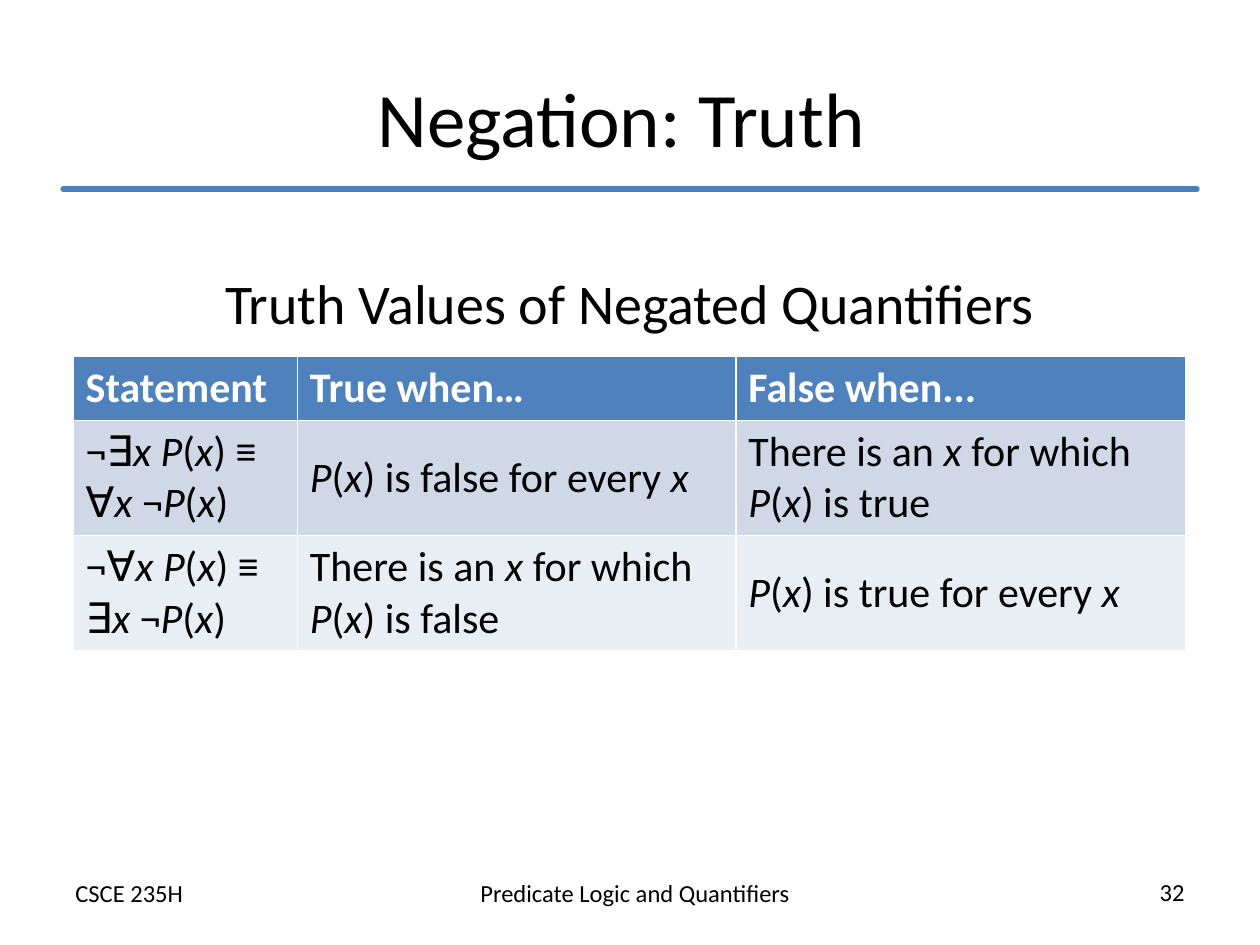
"""Build the slide on the truth values of negated quantifiers."""
import dataclasses

import lxml.etree
import pptx
import pptx.dml.color
import pptx.enum.shapes
import pptx.enum.text
import pptx.oxml.ns
import pptx.util

Inches = pptx.util.Inches
Align = pptx.enum.text.PP_ALIGN
Anchor = pptx.enum.text.MSO_ANCHOR

FONT = "Calibri"
BLACK = "000000"
WHITE = "FFFFFF"
RULE_BLUE = "4B7EBC"
ITALIC_MARK = "*"
COLUMN_WIDTHS = (1.78, 3.48, 3.57)


@dataclasses.dataclass(frozen=True)
class Footer:
    text: str
    left: float
    top: float
    alignment: Align


@dataclasses.dataclass(frozen=True)
class TableRow:
    height: float
    fill: str
    color: str
    bold: bool
    cells: tuple[str, ...]


FOOTERS = (
    Footer("CSCE 235H", 0.5, 6.92, Align.LEFT),
    Footer("Predicate Logic and Quantifiers", 3.58, 6.92, Align.CENTER),
    Footer("32", 6.58, 6.91, Align.RIGHT),
)

ROWS = (
    TableRow(0.5, "4F81BD", WHITE, True, ("Statement", "True when…", "False when...")),
    TableRow(0.9, "D0D8E8", BLACK, False, (
        "¬∃*x P*(*x*) ≡\n∀*x* ¬*P*(*x*)",
        "*P*(*x*) is false for every *x*",
        "There is an* x *for which* P*(*x*) is true",
    )),
    TableRow(0.9, "E9EDF4", BLACK, False, (
        "¬∀*x P*(*x*) ≡\n∃*x* ¬*P*(*x*)",
        "There is an* x *for which* P*(*x*) is false",
        "*P*(*x*) is true for every *x*",
    )),
)


def rgb(color: str) -> pptx.dml.color.RGBColor:
    return pptx.dml.color.RGBColor.from_string(color)


def format_run(run, size: float, color: str, bold: bool = False) -> None:
    run.font.name = FONT
    run.font.size = pptx.util.Pt(size)
    run.font.color.rgb = rgb(color)
    run.font.bold = bold


def place(shape, left: float, top: float, width: float, height: float) -> None:
    shape.left, shape.top = Inches(left), Inches(top)
    shape.width, shape.height = Inches(width), Inches(height)


def write_line(shape, text: str, size: float, alignment: Align):
    shape.text_frame.word_wrap = True
    shape.text_frame.text = text
    paragraph = shape.text_frame.paragraphs[0]
    paragraph.alignment = alignment
    format_run(paragraph.runs[0], size, BLACK)
    return paragraph


def draw_footer(slide, footer: Footer) -> None:
    box = slide.shapes.add_textbox(
        Inches(footer.left), Inches(footer.top), Inches(2.92), Inches(0.34))
    write_line(box, footer.text, 14, footer.alignment)


def draw_rule(slide) -> None:
    rule = slide.shapes.add_connector(
        pptx.enum.shapes.MSO_CONNECTOR.STRAIGHT,
        Inches(0.5), Inches(1.5), Inches(9.5), Inches(1.5))
    rule.line.color.rgb = rgb(RULE_BLUE)
    rule.line.width = pptx.util.Pt(3)
    properties = rule.element.spPr
    properties.find(pptx.oxml.ns.qn("a:ln")).set("cap", "rnd")
    lxml.etree.SubElement(properties, pptx.oxml.ns.qn("a:effectLst"))


def fill_cell(cell, text: str, row: TableRow) -> None:
    cell.fill.solid()
    cell.fill.fore_color.rgb = rgb(row.fill)
    cell.vertical_anchor = Anchor.MIDDLE
    for number, line in enumerate(text.split("\n")):
        frame = cell.text_frame
        paragraph = frame.add_paragraph() if number else frame.paragraphs[0]
        for index, part in enumerate(line.split(ITALIC_MARK)):
            if part:
                run = paragraph.add_run()
                run.text = part
                format_run(run, 24, row.color, row.bold)
                run.font.italic = index % 2 == 1


def draw_table(slide) -> None:
    table = slide.shapes.add_table(
        len(ROWS), len(COLUMN_WIDTHS), Inches(0.58), Inches(2.83),
        Inches(sum(COLUMN_WIDTHS)), Inches(sum(row.height for row in ROWS))).table
    for column, width in zip(table.columns, COLUMN_WIDTHS):
        column.width = Inches(width)
    for table_row, row in zip(table.rows, ROWS):
        table_row.height = Inches(row.height)
        for cell, text in zip(table_row.cells, row.cells):
            fill_cell(cell, text, row)


def main() -> None:
    presentation = pptx.Presentation()
    presentation.slide_width, presentation.slide_height = Inches(10), Inches(7.5)
    slide = presentation.slides.add_slide(presentation.slide_layouts[1])

    title, body = slide.placeholders
    place(title, 0.5, 0.3, 9, 1.25)
    write_line(title, "Negation: Truth ", 44, Align.CENTER)
    title.text_frame.vertical_anchor = Anchor.MIDDLE

    place(body, 0.5, 2.08, 9, 0.83)
    caption = write_line(body, "Truth Values of Negated Quantifiers", 32, Align.CENTER)
    body.text_frame.auto_size = pptx.enum.text.MSO_AUTO_SIZE.NONE
    lxml.etree.SubElement(
        caption._p.get_or_add_pPr(), pptx.oxml.ns.qn("a:buNone"))

    draw_rule(slide)
    draw_table(slide)
    for footer in FOOTERS:
        draw_footer(slide, footer)
    presentation.save("out.pptx")


if __name__ == "__main__":
    main()
